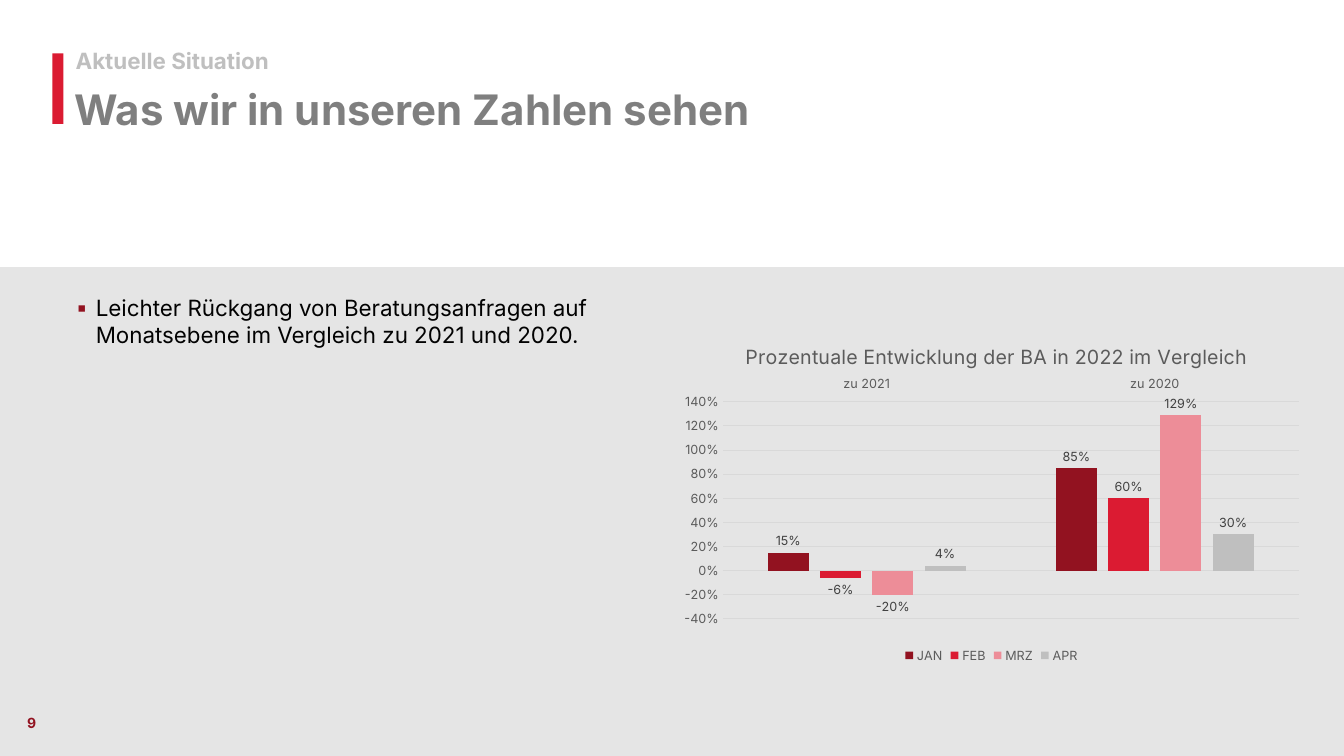
"""Build the slide on consultation figures with a clustered column chart."""
from lxml import etree
from pptx import Presentation
from pptx.chart.data import CategoryChartData
from pptx.dml.color import RGBColor
from pptx.enum.chart import XL_CHART_TYPE as CT, XL_LABEL_POSITION as LP
from pptx.enum.chart import XL_LEGEND_POSITION as LG, XL_TICK_LABEL_POSITION as TL
from pptx.enum.chart import XL_TICK_MARK as TM
from pptx.enum.shapes import MSO_SHAPE
from pptx.enum.text import MSO_ANCHOR, MSO_AUTO_SIZE, PP_ALIGN
from pptx.oxml import parse_xml
from pptx.oxml.ns import nsdecls, qn
from pptx.util import Inches, Pt

TITLE = "Was wir in unseren Zahlen sehen"
KICKER = "Aktuelle Situation"
BULLET = "Leichter Rückgang von Beratungsanfragen auf Monatsebene im Vergleich zu 2021 und 2020."
PAGE = "9"
CHART_TITLE = "Prozentuale Entwicklung der BA in 2022 im Vergleich"
CATEGORIES = ["zu 2021", "zu 2020"]
SERIES = [
    ("JAN", (0.15, 0.85), "921220"),
    ("FEB", (-0.06, 0.6), "DB1B32"),
    ("MRZ", (-0.2, 1.29), "ED8D98"),
    ("APR", (0.04, 0.3), "BFBFBF"),
]
PANELS = [((0, 2.65, 13.33, 4.85), "E5E5E5"), ((0.52, 0.53, 0.11, 0.7), "DB1B32")]
FONT, DARK_RED, GRID, LABEL = "Inter", "921220", "D9D9D9", "5B5B5B"


def rgb(value):
    return RGBColor.from_string(value)


def style(font, size, color, bold=False):
    font.name, font.size, font.bold = FONT, Pt(size), bold
    font.color.rgb = rgb(color)


def write(shape, text, size, color, bold=False, pad=0, anchor=MSO_ANCHOR.TOP):
    tf = shape.text_frame
    tf.word_wrap, tf.auto_size, tf.vertical_anchor = True, MSO_AUTO_SIZE.NONE, anchor
    tf.margin_left = tf.margin_right = 0
    tf.margin_top = tf.margin_bottom = Inches(pad)
    p = tf.paragraphs[0]
    p.text, p.alignment = text, PP_ALIGN.LEFT
    style(p.font, size, color, bold)
    return p


def add_text(s, box, *args, **kwargs):
    return write(s.shapes.add_textbox(*map(Inches, box)), *args, **kwargs)


def add_bullet(p, char, color, indent):
    pPr = p._p.get_or_add_pPr()
    pPr.set("marL", str(Inches(indent)))
    pPr.set("indent", str(-Inches(indent)))
    bullet = [
        f'<a:buClr {nsdecls("a")}><a:srgbClr val="{color}"/></a:buClr>',
        f'<a:buFont {nsdecls("a")} typeface="{FONT}"/>',
        f'<a:buChar {nsdecls("a")} char="{char}"/>',
    ]
    for i, xml in enumerate(bullet):
        pPr.insert(i, parse_xml(xml))


def place(parent, before, **values):
    for old in parent.findall(qn("c:layout")):
        parent.remove(old)
    layout = etree.Element(qn("c:layout"))
    manual = etree.SubElement(layout, qn("c:manualLayout"))
    for tag, val in values.items():
        etree.SubElement(manual, qn("c:" + tag)).set("val", str(val))
    parent.insert(before, layout)


def add_column_chart(s):
    data = CategoryChartData(number_format="0%")
    data.categories = CATEGORIES
    for name, values, _ in SERIES:
        data.add_series(name, values)
    box = map(Inches, (6.66, 3.2, 6.35, 3.42))
    chart = s.shapes.add_chart(CT.COLUMN_CLUSTERED, *box, data).chart
    style(chart.font, 10, "020202")

    chart.has_title = True
    title = chart.chart_title
    p = title.text_frame.paragraphs[0]
    p.text = CHART_TITLE
    style(p.font, 14, LABEL)
    title.include_in_layout = False
    place(title._element, 1, xMode="edge", yMode="edge", x=0.11, y=0.05)

    chart.has_legend = True
    chart.legend.position, chart.legend.include_in_layout = LG.BOTTOM, False
    style(chart.legend.font, 9, LABEL)

    cat, val = chart.category_axis, chart.value_axis
    for axis in (cat, val):
        axis.major_tick_mark = axis.minor_tick_mark = TM.NONE
        style(axis.tick_labels.font, 9, LABEL)
    cat.tick_label_position = TL.HIGH
    val.minimum_scale, val.maximum_scale, val.major_unit = -0.4, 1.4, 0.2
    val.tick_labels.number_format = "0%"
    val.tick_labels.number_format_is_linked = False
    val.format.line.fill.background()
    for line in (cat.format.line, val.major_gridlines.format.line):
        line.color.rgb, line.width = rgb(GRID), Pt(0.75)

    plot = chart.plots[0]
    plot.gap_width, plot.overlap, plot.vary_by_categories = 219, -27, False
    for series, (_, _, color) in zip(plot.series, SERIES):
        series.format.fill.solid()
        series.format.fill.fore_color.rgb = rgb(color)
        series.invert_if_negative = False
        labels = series.data_labels
        labels.show_value, labels.position = True, LP.OUTSIDE_END
        labels.number_format, labels.number_format_is_linked = "0%", False
        style(labels.font, 9, "414141")
    place(chart._chartSpace.chart.plotArea, 0, layoutTarget="inner", xMode="edge",
          yMode="edge", x=0.08, y=0.23, w=0.9, h=0.63)


def main():
    prs = Presentation()
    prs.slide_width, prs.slide_height = Inches(13.33), Inches(7.5)
    s = prs.slides.add_slide(prs.slide_layouts[5])
    for box, color in PANELS:
        panel = s.shapes.add_shape(MSO_SHAPE.RECTANGLE, *map(Inches, box))
        panel.shadow.inherit = False
        panel.fill.solid()
        panel.fill.fore_color.rgb = rgb(color)
        panel.line.fill.background()

    title = s.shapes.title
    title.left, title.top, title.width, title.height = map(Inches, (0.74, 0.8, 11.82, 0.53))
    write(title, TITLE, 30, "7F7F7F", True, anchor=MSO_ANCHOR.BOTTOM)
    add_text(s, (0.75, 0.47, 11.81, 0.33), KICKER, 16, "BFBFBF", True)
    p = add_text(s, (0.75, 2.87, 5.72, 3.17), BULLET, 16, "020202", pad=0.05)
    add_bullet(p, "▪", DARK_RED, 0.2)
    add_text(s, (0.27, 7.04, 1.02, 0.31), PAGE, 10, DARK_RED, True, pad=0.05)
    add_column_chart(s)
    prs.save("out.pptx")


if __name__ == "__main__":
    main()
